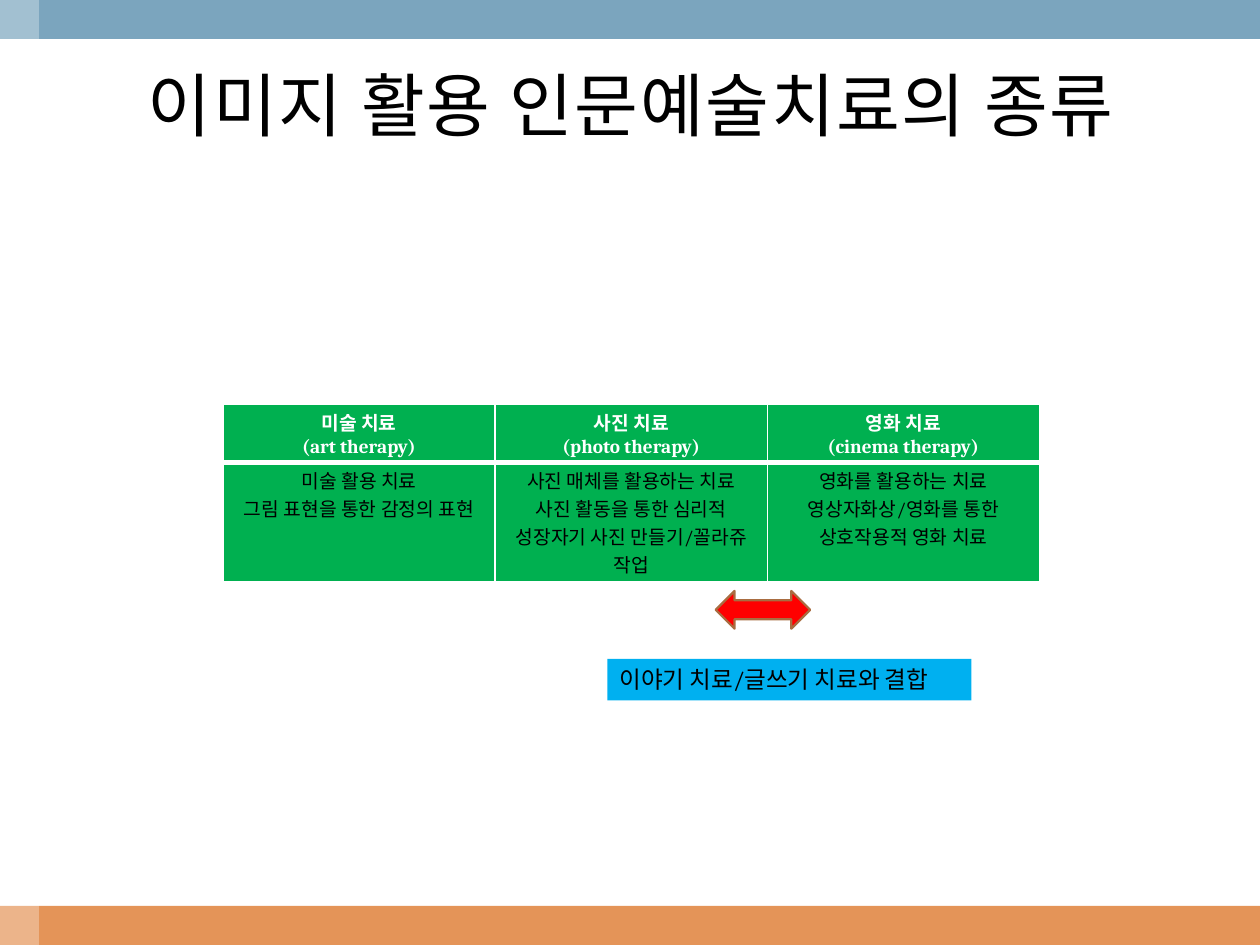
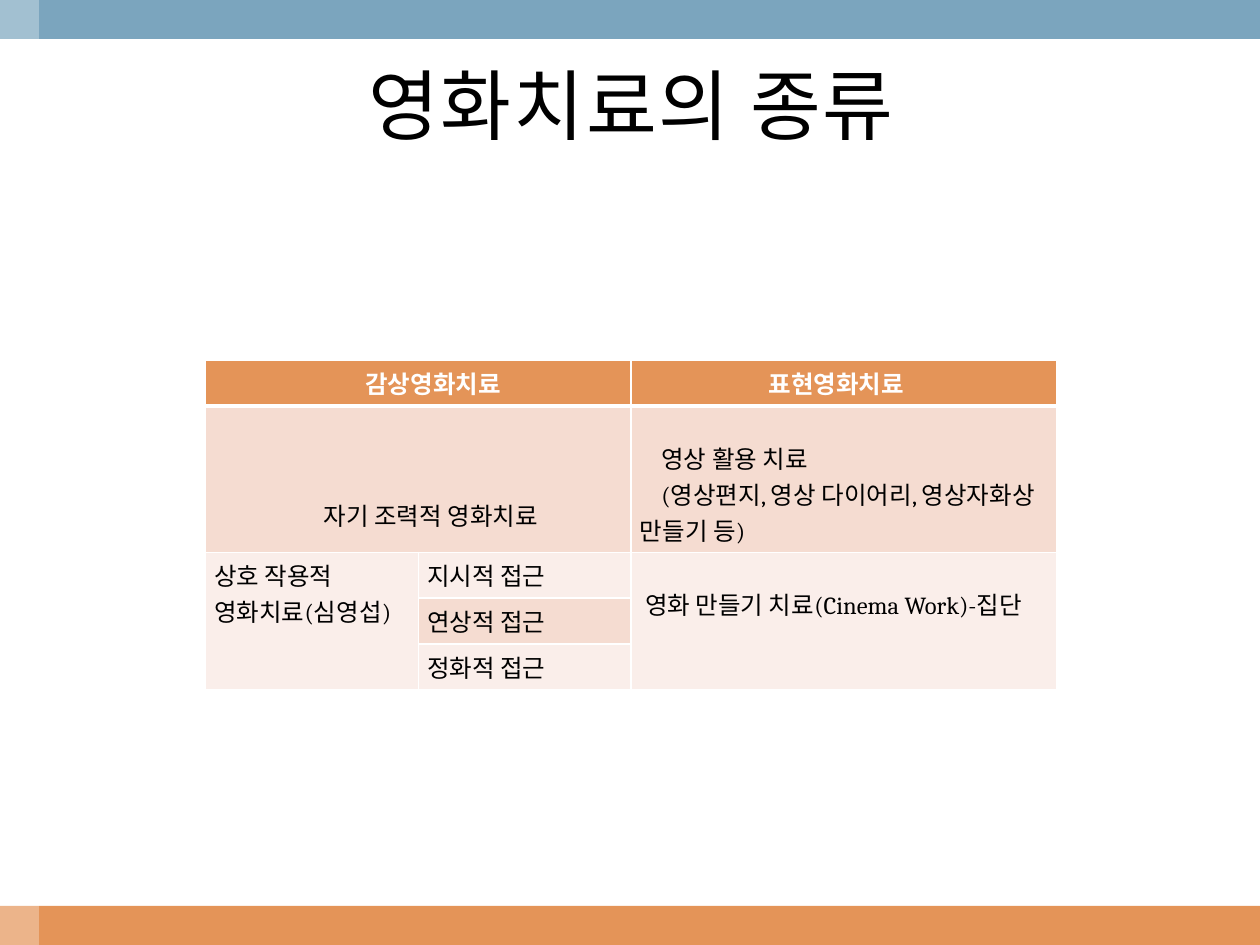
from lxml import etree
from pptx import Presentation
from pptx import util as u
from pptx.dml.color import RGBColor
from pptx.enum import shapes, text
from pptx.oxml import ns

# Shared look
FONT = "Cambria"
BLACK, WHITE = RGBColor(0, 0, 0), RGBColor(255, 255, 255)
ORANGE, BLUE = RGBColor(0xE4, 0x94, 0x58), RGBColor(0x7B, 0xA5, 0xBE)
GREEN, RED, SKY = RGBColor(0, 0xB0, 0x50), RGBColor(255, 0, 0), RGBColor(0, 0xB0, 0xF0)
BROWN = RGBColor(0xA9, 0x6D, 0x41)
PEACH, PALE = RGBColor(0xF5, 0xDC, 0xD1), RGBColor(0xFA, 0xEE, 0xEA)
WIDTH, HEIGHT, BAND = 10, 7.5, 0.31
CENTER, LEFT = text.PP_ALIGN.CENTER, text.PP_ALIGN.LEFT

# Slide 1: one (heading, description) pair of paragraph lists per column
IMAGE_TITLE = "이미지 활용 인문예술치료의 종류"
IMAGE_THERAPIES = [
    (["미술 치료", "(art therapy)"],
     ["미술 활용 치료", "그림 표현을 통한 감정의 표현"]),
    (["사진 치료", "(photo therapy)"],
     ["사진 매체를 활용하는 치료", "사진 활동을 통한 심리적 성장자기 사진 만들기/꼴라쥬 작업"]),
    (["영화 치료", "(cinema therapy)"],
     ["영화를 활용하는 치료", "영상자화상/영화를 통한 상호작용적 영화 치료"]),
]
COMBINATION = "이야기 치료/글쓰기 치료와 결합"

# Slide 2: row, column, rows spanned, columns spanned, fill, paragraphs,
# left margin, top margin, first-line indent
FILM_TITLE = "영화치료의 종류"
SIDE, TOP = 0.07, 0.04
FILM_CELLS = [
    (0, 0, 1, 2, ORANGE, ["감상영화치료"], 1.27, TOP, 0),
    (0, 2, 1, 1, ORANGE, ["표현영화치료"], 1.09, TOP, 0),
    (1, 0, 1, 2, PEACH, ["자기 조력적 영화치료"], 0.94, 0.72, 0),
    (1, 2, 1, 1, PEACH, ["영상 활용 치료", "(영상편지, 영상 다이어리, 영상자화상 만들기 등)"],
     SIDE, 0.27, 0.17),
    (2, 0, 3, 1, PALE, ["상호 작용적", "영화치료(심영섭)"], SIDE, TOP, 0),
    (2, 1, 1, 1, PALE, ["지시적 접근"], SIDE, TOP, 0),
    (3, 1, 1, 1, PEACH, ["연상적 접근"], SIDE, TOP, 0),
    (4, 1, 1, 1, PALE, ["정화적 접근"], SIDE, TOP, 0),
    (2, 2, 3, 1, PALE, ["영화 만들기 치료(Cinema Work)-집단"], 0.11, 0.27, 0),
]


def inches(*lengths):
    return [u.Inches(length) for length in lengths]


def write(frame, lines, size, color=BLACK, align=LEFT, bold=False, indent=0):
    frame.text = "\n".join(lines)
    for line in frame.paragraphs:
        line.alignment = align
        if indent:
            line._p.get_or_add_pPr().set("indent", str(u.Inches(indent)))
        font = line.font
        font.name, font.size, font.bold = FONT, u.Pt(size), bold
        font.color.rgb = color


def add_block(slide, preset, box, fill):
    block = slide.shapes.add_shape(preset, *inches(*box))
    block.shadow.inherit = False
    block.fill.solid()
    block.fill.fore_color.rgb = fill
    block.line.fill.background()
    return block


def add_bands(slide, layout):
    """Draw the bands and move them behind the layout's placeholders."""
    bands = [((0, HEIGHT - BAND, WIDTH, BAND), ORANGE),
             ((0, 0, WIDTH, BAND), BLUE),
             ((0, 0, BAND, HEIGHT), WHITE)]
    for place, (box, fill) in enumerate(bands, start=2):
        band = add_block(slide, shapes.MSO_SHAPE.RECTANGLE, box, fill)
        if fill == WHITE:
            color = band._element.spPr.find(".//" + ns.qn("a:srgbClr"))
            etree.SubElement(color, ns.qn("a:alpha"), val="30000")
        layout.shapes._spTree.insert(place, band._element)


def add_titled_slide(deck, layout, title, size):
    slide = deck.slides.add_slide(layout)
    heading = slide.shapes.title
    heading.left, heading.top, heading.width, heading.height = inches(0.33, BAND, 9.36, 1.03)
    frame = heading.text_frame
    frame.auto_size = text.MSO_AUTO_SIZE.NONE
    frame.vertical_anchor = text.MSO_ANCHOR.MIDDLE
    write(frame, [title], size, align=CENTER)
    frame.paragraphs[0]._p.pPr.find(ns.qn("a:defRPr")).set("spc", "100")
    return slide


def add_grid(slide, left, top, columns, rows):
    """Add a table with white rules, the one under the header row thicker."""
    grid = slide.shapes.add_table(len(rows), len(columns), *inches(
        left, top, sum(columns), sum(rows))).table
    for column, width in zip(grid.columns, columns):
        column.width = u.Inches(width)
    for row, height in zip(grid.rows, rows):
        row.height = u.Inches(height)
    for r in range(len(rows)):
        for c in range(len(columns)):
            props = grid.cell(r, c)._tc.get_or_add_tcPr()
            for side in "LRTB":
                under_header = (r, side) in [(0, "B"), (1, "T")]
                rule = etree.SubElement(props, ns.qn("a:ln" + side),
                                        w=str(u.Pt(3 if under_header else 1)))
                paint = etree.SubElement(rule, ns.qn("a:solidFill"))
                etree.SubElement(paint, ns.qn("a:srgbClr"), val=str(WHITE))
    return grid


def fill_cell(cell, lines, fill, size, header, margins, align=LEFT, indent=0):
    cell.fill.solid()
    cell.fill.fore_color.rgb = fill
    (cell.margin_left, cell.margin_top,
     cell.margin_right, cell.margin_bottom) = inches(*margins)
    write(cell.text_frame, lines, size, WHITE if header else BLACK, align, header, indent)


def build_image_therapies(slide):
    grid = add_grid(slide, 1.77, 3.21, [2.16] * len(IMAGE_THERAPIES), [0.43, 0.81])
    for c, therapy in enumerate(IMAGE_THERAPIES):
        for r, lines in enumerate(therapy):
            fill_cell(grid.cell(r, c), lines, GREEN, 11, r == 0,
                      (0.06, 0.03, 0.06, 0.03), CENTER)

    # Arrow joining photo and cinema therapy, with its label below
    arrow = add_block(slide, shapes.MSO_SHAPE.LEFT_RIGHT_ARROW, (5.68, 4.69, 0.75, 0.3), RED)
    arrow.line.color.rgb = BROWN
    arrow.line.width = u.Pt(1.25)
    label = slide.shapes.add_textbox(*inches(4.82, 5.23, 2.89, 0.33))
    label.fill.solid()
    label.fill.fore_color.rgb = SKY
    label.text_frame.word_wrap = False
    label.text_frame.auto_size = text.MSO_AUTO_SIZE.SHAPE_TO_FIT_TEXT
    write(label.text_frame, [COMBINATION], 13.5)


def build_film_therapies(slide):
    grid = add_grid(slide, 1.63, 2.86, [1.69, 1.69, 3.38], [0.3, 1.14, 0.3, 0.3, 0.3])
    for r, c, down, across, fill, lines, left, top, indent in FILM_CELLS:
        cell = grid.cell(r, c)
        if down * across > 1:
            cell.merge(grid.cell(r + down - 1, c + across - 1))
        fill_cell(cell, lines, fill, 14, r == 0, (left, top, SIDE, TOP), indent=indent)


def main():
    deck = Presentation()
    deck.slide_width, deck.slide_height = inches(WIDTH, HEIGHT)
    layout = deck.slide_layouts.get_by_name("Title Only")
    image_slide = add_titled_slide(deck, layout, IMAGE_TITLE, 39.6)
    add_bands(image_slide, layout)
    build_image_therapies(image_slide)
    build_film_therapies(add_titled_slide(deck, layout, FILM_TITLE, 44))
    deck.save("out.pptx")


if __name__ == "__main__":
    main()
